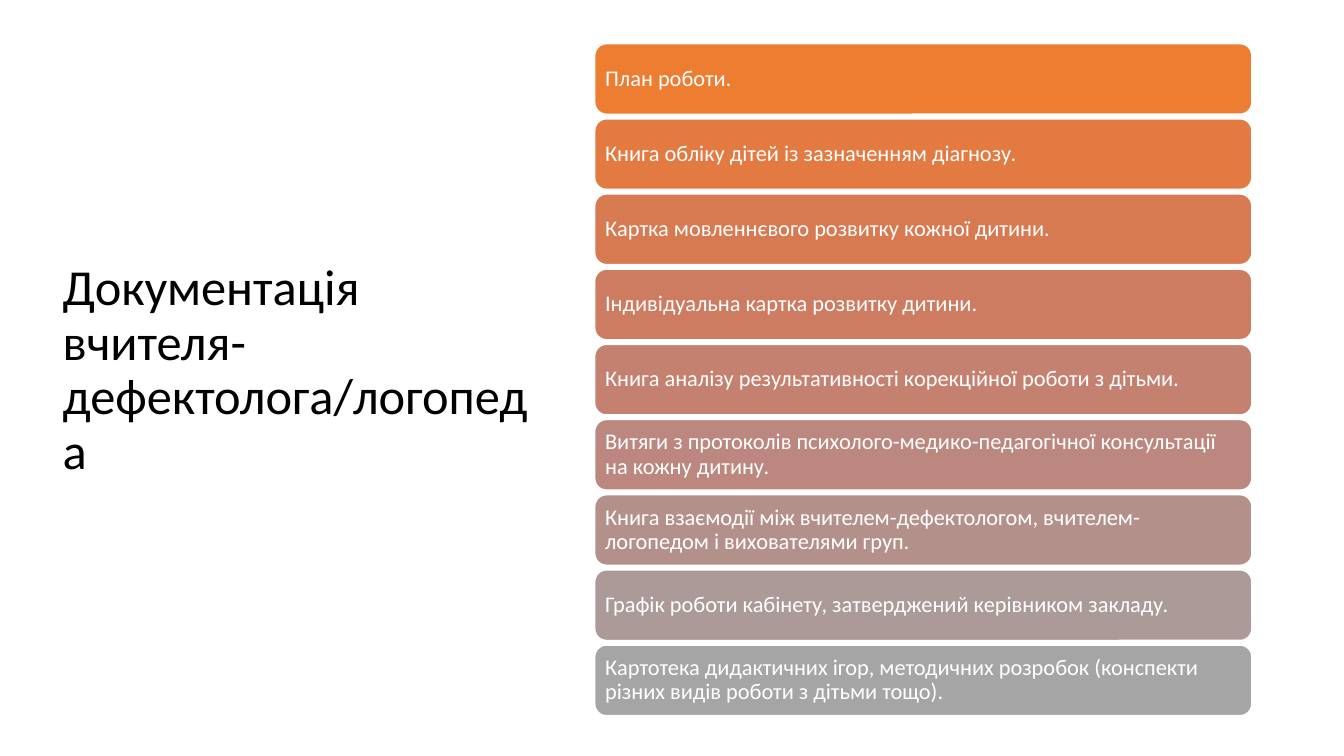
from pptx import Presentation
from pptx.dml.color import RGBColor
from pptx.enum.shapes import MSO_SHAPE
from pptx.enum.text import MSO_ANCHOR, MSO_AUTO_SIZE, PP_ALIGN
from pptx.util import Pt

BLACK = RGBColor(0x00, 0x00, 0x00)
WHITE = RGBColor(0xFF, 0xFF, 0xFF)
BAR_COLORS = [
    RGBColor(0xED, 0x7D, 0x31),
    RGBColor(0xE2, 0x7A, 0x42),
    RGBColor(0xD8, 0x7A, 0x51),
    RGBColor(0xCE, 0x7C, 0x61),
    RGBColor(0xC4, 0x81, 0x70),
    RGBColor(0xBC, 0x87, 0x7E),
    RGBColor(0xB4, 0x90, 0x8B),
    RGBColor(0xAC, 0x9A, 0x99),
    RGBColor(0xA5, 0xA5, 0xA5),
]

TITLE = "Документація вчителя-дефектолога/логопеда"
DOCUMENTS = [
    "План роботи.",
    "Книга обліку дітей із зазначенням діагнозу.",
    "Картка мовленнєвого розвитку кожної дитини.",
    "Індивідуальна картка розвитку дитини.",
    "Книга аналізу результативності корекційної роботи з дітьми.",
    "Витяги з протоколів психолого-медико-педагогічної консультації на кожну дитину.",
    "Книга взаємодії між вчителем-дефектологом, вчителем-логопедом і вихователями груп.",
    "Графік роботи кабінету, затверджений керівником закладу.",
    "Картотека дидактичних ігор, методичних розробок (конспекти різних видів роботи з дітьми тощо).",
]

BAR_LEFT, BAR_TOP = 424.8, 31.2
BAR_WIDTH, BAR_HEIGHT = 469.4, 50.4
BAR_PITCH = 53.7


def write_text(box, text, *, font, size, color, inset=None):
    frame = box.text_frame
    frame.auto_size = MSO_AUTO_SIZE.NONE
    frame.word_wrap = True
    frame.vertical_anchor = MSO_ANCHOR.MIDDLE
    if inset is not None:
        frame.margin_left = frame.margin_right = Pt(inset)
        frame.margin_top = frame.margin_bottom = Pt(inset)
    para = frame.paragraphs[0]
    para.alignment = PP_ALIGN.LEFT
    para.line_spacing = 0.9
    span = para.add_run()
    span.text = text
    span.font.name = font
    span.font.size = Pt(size)
    span.font.color.rgb = color


class SlideBuilder:
    font = "Calibri"
    title_size = 36
    bar_size = 16

    def __init__(self, page):
        self.page = page

    def title(self, text, left, top, width, height):
        box = self.page.shapes.title
        box.left, box.top = Pt(left), Pt(top)
        box.width, box.height = Pt(width), Pt(height)
        write_text(box, text, font=self.font, size=self.title_size, color=BLACK)

    def bar(self, group, text, color, top):
        box = group.shapes.add_shape(
            MSO_SHAPE.ROUNDED_RECTANGLE,
            Pt(BAR_LEFT), Pt(top), Pt(BAR_WIDTH), Pt(BAR_HEIGHT),
        )
        box.shadow.inherit = False
        box.fill.solid()
        box.fill.fore_color.rgb = color
        box.line.color.rgb = WHITE
        box.line.width = Pt(1)
        write_text(box, text, font=self.font, size=self.bar_size, color=WHITE, inset=5)

    def bars(self, texts, colors):
        group = self.page.shapes.add_group_shape()
        for index, (text, color) in enumerate(zip(texts, colors)):
            self.bar(group, text, color, BAR_TOP + index * BAR_PITCH)


def main():
    deck = Presentation()
    deck.slide_width, deck.slide_height = Pt(960), Pt(540)
    page = deck.slides.add_slide(deck.slide_layouts[5])
    builder = SlideBuilder(page)
    builder.title(TITLE, 37.6, 46, 362, 438.5)
    builder.bars(DOCUMENTS, BAR_COLORS)
    deck.save("out.pptx")


if __name__ == "__main__":
    main()
